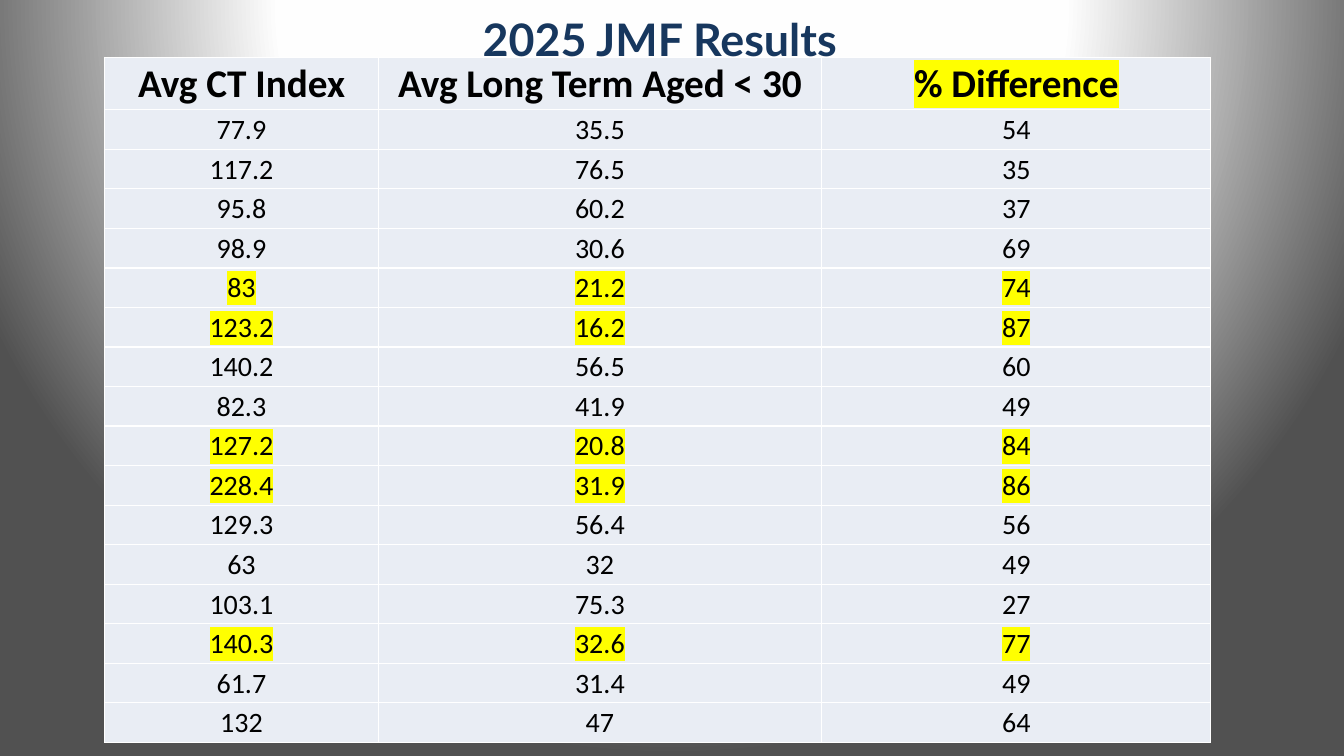
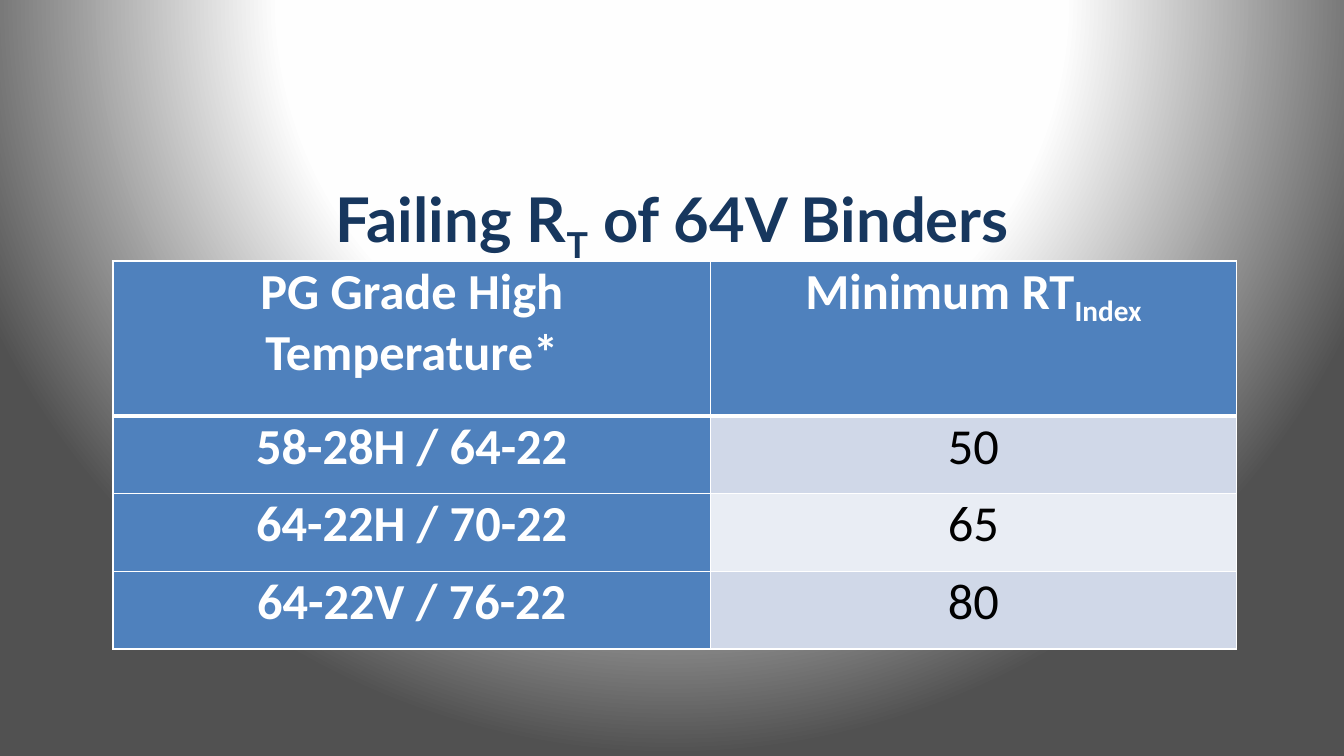
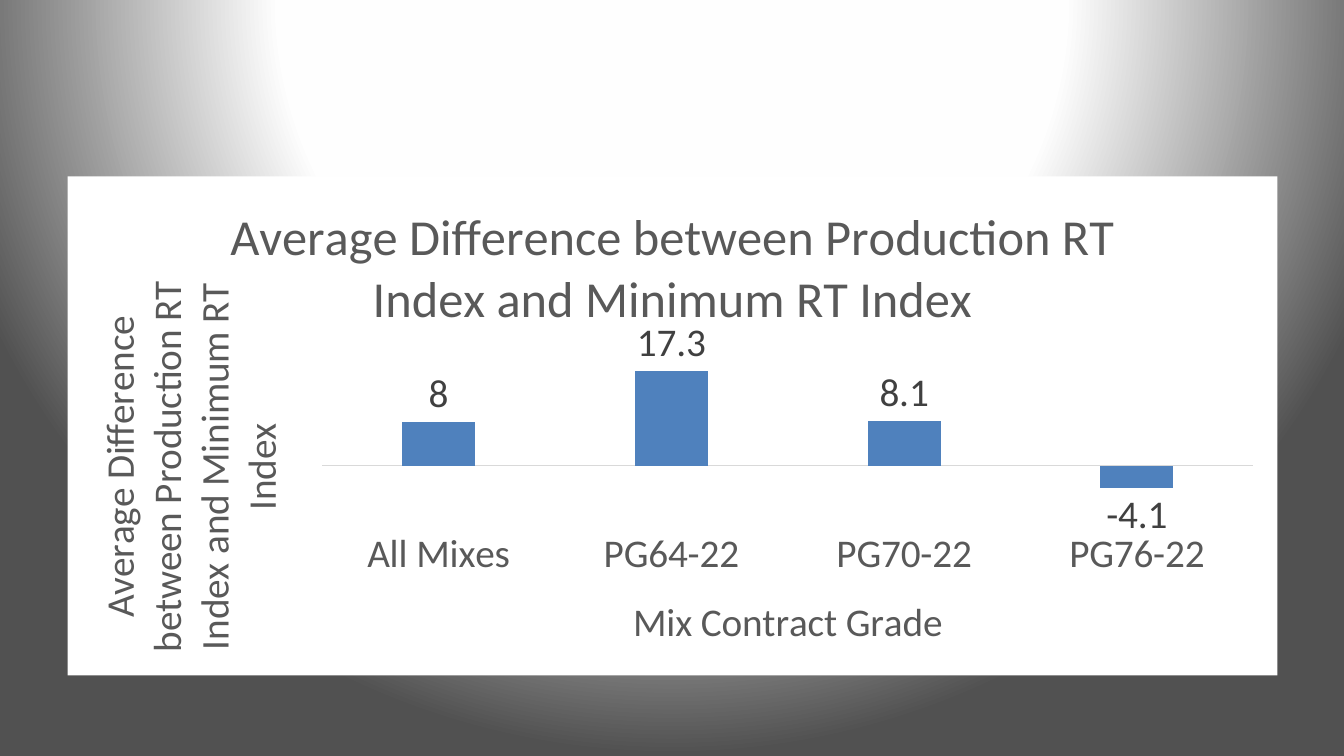
"""Builds three slides on 2025 mix results: an ageing table, minimum RT limits and an RT chart."""
from lxml import etree
from pptx import Presentation
from pptx import util as u
from pptx.chart import data
from pptx.dml.color import RGBColor
from pptx.enum import chart as ch
from pptx.enum import text as t
from pptx.oxml import parse_xml
from pptx.oxml.ns import nsdecls, qn

COLOURS = {
    "navy": "17375E", "blue": "4F81BD", "pale": "E9EDF4", "mid": "D0D8E8",
    "white": "FFFFFF", "black": "000000", "yellow": "FFFF00",
    "grey": "595959", "label": "404040", "axis": "D9D9D9",
}
RGB = {name: RGBColor.from_string(code) for name, code in COLOURS.items()}

prs = Presentation()
prs.slide_width, prs.slide_height = u.Inches(13.33), u.Inches(7.5)
TITLE_ONLY, BLANK = prs.slide_layouts[5], prs.slide_layouts[6]

master = prs.slide_master
master.background.fill.solid()
backdrop = master.element.cSld.find(".//" + qn("p:bgPr"))
backdrop.replace(backdrop[0], parse_xml(
    f'<a:gradFill rotWithShape="1" {nsdecls("a")}><a:gsLst>'
    '<a:gs pos="0"><a:srgbClr val="FFFFFF"/></a:gs>'
    '<a:gs pos="51000"><a:srgbClr val="FEFEFE"/></a:gs>'
    '<a:gs pos="98000"><a:srgbClr val="515151"/></a:gs></a:gsLst>'
    '<a:path path="circle"><a:fillToRect l="50000" t="-80000" r="50000" b="180000"/></a:path>'
    '</a:gradFill>'))


def add_titled_slide(box, size, pieces):
    """Add a title-only slide; every second piece of the title is a subscript."""
    slide = prs.slides.add_slide(TITLE_ONLY)
    title = slide.shapes.title
    title.left, title.top, title.width, title.height = [u.Inches(n) for n in box]
    frame = title.text_frame
    frame.auto_size, frame.vertical_anchor = t.MSO_AUTO_SIZE.NONE, t.MSO_ANCHOR.MIDDLE
    write_line(frame.paragraphs[0], pieces, "Lato", size, "navy", True)
    return slide


def write_line(line, pieces, face, size, colour, bold):
    """Write centred text whose odd pieces are subscripts."""
    line.alignment = t.PP_ALIGN.CENTER
    font = line.font
    font.name, font.size, font.bold = face, u.Pt(size), bold
    font.color.rgb = RGB[colour]
    for i, piece in enumerate(pieces):
        run = line.add_run()
        run.text = piece
        if i % 2:
            run.font._element.set("baseline", "-25000")


results = [
    ("Avg CT Index", "Avg Long Term Aged < 30", "% Difference"),
    ("77.9", "35.5", "54"), ("117.2", "76.5", "35"), ("95.8", "60.2", "37"),
    ("98.9", "30.6", "69"), ("83", "21.2", "74"), ("123.2", "16.2", "87"),
    ("140.2", "56.5", "60"), ("82.3", "41.9", "49"), ("127.2", "20.8", "84"),
    ("228.4", "31.9", "86"), ("129.3", "56.4", "56"), ("63", "32", "49"),
    ("103.1", "75.3", "27"), ("140.3", "32.6", "77"), ("61.7", "31.4", "49"),
    ("132", "47", "64"),
]
limits = [
    ("PG Grade High Temperature*", ("Minimum RT", "Index")),
    ("58-28H / 64-22", "50"), ("64-22H / 70-22", "65"), ("64-22V / 76-22", "80"),
]
highlighted_rows = {5, 6, 9, 10, 14}

results_slide = add_titled_slide((0, 0, 13.09, 0.76), 32, ["2025 JMF Results"])
limits_slide = add_titled_slide((0.67, 1.59, 12, 1.25), 44, ["Failing R", "T", " of 64V Binders"])

tables = [
    (results_slide, results, (1.04, 0.57), (2.71, 4.4, 3.86), [0.52] + [6.28 / 16] * 16, (0.01, 0.01)),
    (limits_slide, limits, (1.12, 2.59), (5.93, 5.21), [1.54] + [0.77] * 3, (0.07, 0)),
]
for slide, rows, (left, top), widths, heights, (side_inset, top_inset) in tables:
    grid = slide.shapes.add_table(
        len(rows), len(widths), u.Inches(left), u.Inches(top),
        u.Inches(sum(widths)), u.Inches(sum(heights))).table
    grid.first_row = grid.horz_banding = False
    for column, width in zip(grid.columns, widths):
        column.width = u.Inches(width)
    for r, (row, height) in enumerate(zip(rows, heights)):
        grid.rows[r].height = u.Inches(height)
        for c, content in enumerate(row):
            cell = grid.cell(r, c)
            cell.margin_left = cell.margin_right = u.Inches(side_inset)
            cell.margin_top, cell.margin_bottom = u.Inches(top_inset), 0
            if rows is results:
                cell.vertical_anchor = t.MSO_ANCHOR.MIDDLE
                fill, ink, bold, size = "pale", "black", r == 0, 28 if r == 0 else 20
            else:
                cell.vertical_anchor = t.MSO_ANCHOR.TOP
                bold, size = r == 0 or c == 0, 36
                ink = "white" if bold else "black"
                fill = "blue" if bold else "mid" if r % 2 else "pale"
            thick_edges = {0: "B", 1: "T"} if rows is limits else {}
            for side in "LRTB":
                points = 3 if thick_edges.get(r) == side else 1
                cell._tc.get_or_add_tcPr().append(parse_xml(
                    f'<a:ln{side} w="{u.Pt(points)}" {nsdecls("a")}><a:solidFill>'
                    f'<a:srgbClr val="{COLOURS["white"]}"/></a:solidFill></a:ln{side}>'))
            cell.fill.solid()
            cell.fill.fore_color.rgb = RGB[fill]
            line = cell.text_frame.paragraphs[0]
            write_line(line, [content] if isinstance(content, str) else content,
                       "Calibri", size, ink, bold)
            if rows is results and (r in highlighted_rows or (r, c) == (0, 2)):
                marker = etree.SubElement(line.runs[0].font._element, qn("a:highlight"))
                etree.SubElement(marker, qn("a:srgbClr"), val=COLOURS["yellow"])

differences = data.CategoryChartData()
differences.categories = ["All Mixes", "PG64-22", "PG70-22", "PG76-22"]
differences.add_series("Series 1", (8, 17.3, 8.1, -4.1))
chart_slide = prs.slides.add_slide(BLANK)
chart = chart_slide.shapes.add_chart(
    ch.XL_CHART_TYPE.COLUMN_CLUSTERED, u.Inches(0.67), u.Inches(1.75),
    u.Inches(12), u.Inches(4.95), differences).chart
chart.has_legend = False
chart.font.name, chart.font.size = "Calibri", u.Pt(10)
chart._chartSpace.chart.addnext(parse_xml(
    f'<c:spPr {nsdecls("c", "a")}><a:solidFill><a:srgbClr val="{COLOURS["white"]}"/>'
    '</a:solidFill><a:ln><a:noFill/></a:ln></c:spPr>'))

grades, gap_axis = chart.category_axis, chart.value_axis
gap_axis.visible = gap_axis.has_major_gridlines = False
gap_axis.minimum_scale, gap_axis.maximum_scale = -10, 20
grades.tick_label_position = ch.XL_TICK_LABEL_POSITION.LOW
grades.major_tick_mark = ch.XL_TICK_MARK.NONE
grades.format.line.color.rgb = RGB["axis"]
grades.format.line.width = u.Pt(0.75)

difference = "Average Difference between Production RT Index and Minimum RT Index"
headings = [(chart.chart_title, difference, 36), (gap_axis.axis_title, difference, 28),
            (grades.axis_title, "Mix Contract Grade", 28)]
for heading, wording, size in headings:
    heading.text_frame.text = wording
    font = heading.text_frame.paragraphs[0].font
    font.name, font.size, font.bold = "Calibri", u.Pt(size), False
    font.color.rgb = RGB["grey"]
chart.chart_title.include_in_layout = False
gap_axis.axis_title.text_frame._txBody.bodyPr.set("rot", "-5400000")

columns = chart.plots[0]
columns.gap_width, columns.overlap, columns.vary_by_categories = 219, -27, False
series = columns.series[0]
series.invert_if_negative = False
series.format.fill.solid()
series.format.fill.fore_color.rgb = RGB["blue"]
labels = series.data_labels
labels.show_value, labels.position = True, ch.XL_LABEL_POSITION.OUTSIDE_END
for font, colour in [(labels.font, "label"), (grades.tick_labels.font, "grey")]:
    font.name, font.size = "Calibri", u.Pt(28)
    font.color.rgb = RGB[colour]

prs.save("out.pptx")
